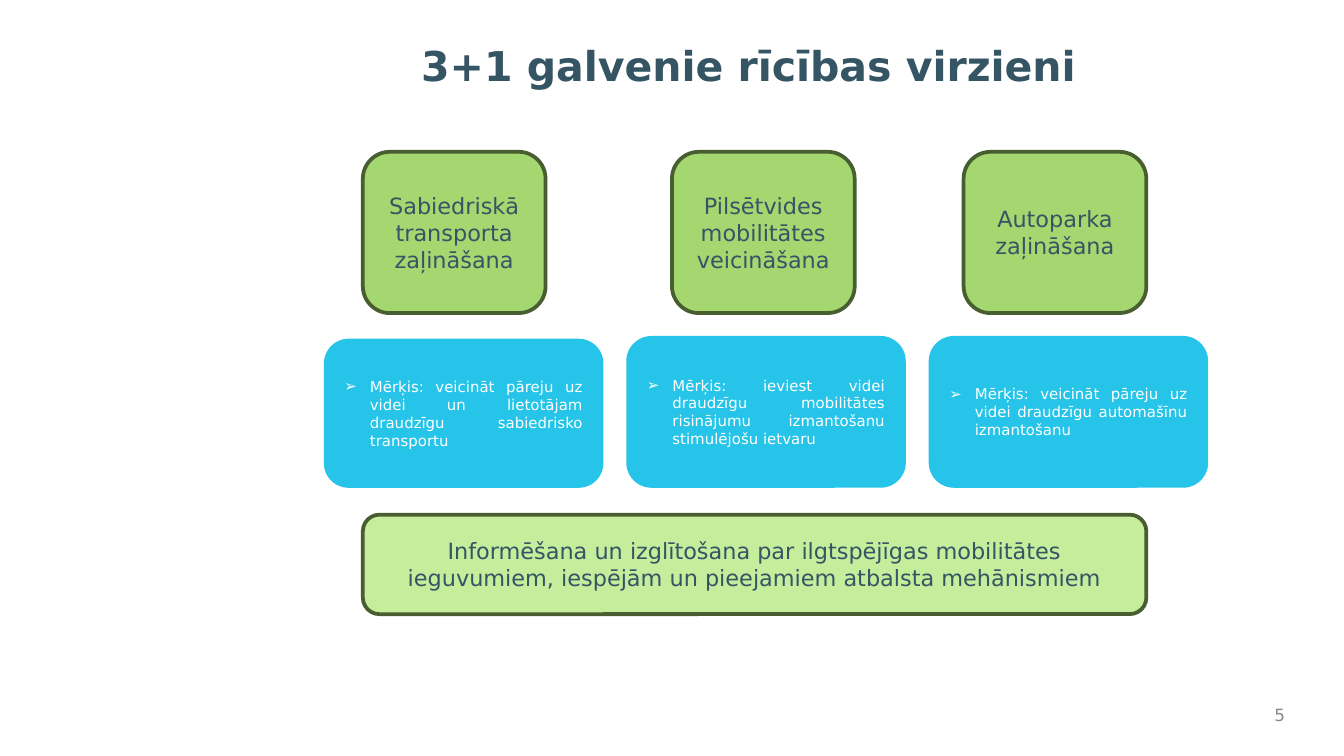
from lxml import etree
from pptx import Presentation
from pptx.dml.color import RGBColor
from pptx.enum.shapes import MSO_SHAPE
from pptx.enum.text import MSO_ANCHOR, MSO_AUTO_SIZE, PP_ALIGN
from pptx.oxml.ns import qn
from pptx.util import Inches, Pt

ROUNDED = MSO_SHAPE.ROUNDED_RECTANGLE
TOP, MIDDLE = MSO_ANCHOR.TOP, MSO_ANCHOR.MIDDLE
NO_FIT = MSO_AUTO_SIZE.NONE
CENTER, RIGHT, JUSTIFY = PP_ALIGN.CENTER, PP_ALIGN.RIGHT, PP_ALIGN.JUSTIFY

PAGE_WIDTH = 10
PAGE_HEIGHT = PAGE_WIDTH * 9 / 16

FONT = "DejaVu Sans"
SLATE, GREY, WHITE = "355464", "898989", "FFFFFF"
GREEN, PALE_GREEN, DARK_GREEN, BLUE = "A5D770", "C6ED9C", "485E31", "26C4E8"

TITLE_FORMAT = {"size": Pt(22), "bold": True}
LABEL_FORMAT = {"size": Pt(12), "bold": False}
GOAL_FORMAT = {"size": Pt(8), "bold": False}
NUMBER_FORMAT = {"size": Pt(9), "bold": False}

# Direction name and its box, then goal and its box
DIRECTIONS = [
    ("Sabiedriskā transporta zaļināšana", (2.7, 1.13, 1.36, 1.2),
     "Mērķis: veicināt pāreju uz videi un lietotājam draudzīgu sabiedrisko transportu",
     (2.41, 2.52, 2.08, 1.11)),
    ("Pilsētvides mobilitātes veicināšana", (5, 1.13, 1.36, 1.2),
     "Mērķis: ieviest videi draudzīgu mobilitātes risinājumu izmantošanu stimulējošu ietvaru",
     (4.66, 2.5, 2.08, 1.13)),
    ("Autoparka zaļināšana", (7.17, 1.13, 1.36, 1.2),
     "Mērķis: veicināt pāreju uz videi draudzīgu automašīnu izmantošanu",
     (6.91, 2.5, 2.08, 1.13)),
]


def colour(value):
    return RGBColor.from_string(value)


def write(shape, text, text_format, text_colour, alignment=CENTER, anchor=MIDDLE):
    """Fill the shape with one formatted paragraph and return that paragraph."""
    frame = shape.text_frame
    frame.word_wrap = True
    frame.auto_size = NO_FIT
    frame.vertical_anchor = anchor
    para = frame.paragraphs[0]
    para.alignment = alignment
    span = para.add_run()
    span.text = text
    span.font.name = FONT
    span.font.color.rgb = colour(text_colour)
    for name, value in text_format.items():
        setattr(span.font, name, value)
    return para


def add_bullet(para, indent=0.19):
    properties = para._p.get_or_add_pPr()
    properties.set("marL", str(Inches(indent)))
    properties.set("indent", str(-Inches(indent)))
    etree.SubElement(properties, qn("a:buFont"), typeface=FONT)
    etree.SubElement(properties, qn("a:buChar"), char="➢")


def add_panel(page, box, fill, outline=None):
    panel = page.shapes.add_shape(ROUNDED, *map(Inches, box))
    panel.shadow.inherit = False
    panel.fill.solid()
    panel.fill.fore_color.rgb = colour(fill)
    if outline:
        panel.line.color.rgb = colour(outline)
        panel.line.width = Pt(2)
    else:
        panel.line.fill.background()
    return panel


def add_title(page, box, text):
    title = page.shapes.title
    title.left, title.top, title.width, title.height = map(Inches, box)
    write(title, text, TITLE_FORMAT, SLATE, anchor=TOP)


def add_label(page, box, text, fill):
    write(add_panel(page, box, fill, DARK_GREEN), text, LABEL_FORMAT, SLATE)


def add_goal(page, box, text):
    para = write(add_panel(page, box, BLUE), text, GOAL_FORMAT, WHITE, JUSTIFY)
    add_bullet(para)
    para.space_after = Pt(6)


def add_page_number(page, box, text):
    number = page.shapes.add_textbox(*map(Inches, box))
    write(number, text, NUMBER_FORMAT, GREY, RIGHT)


def main():
    deck = Presentation()
    deck.slide_width, deck.slide_height = Inches(PAGE_WIDTH), Inches(PAGE_HEIGHT)
    page = deck.slides.add_slide(deck.slide_layouts[5])
    add_title(page, (2.83, 0.25, 5.48, 0.87), "3+1 galvenie rīcības virzieni")
    add_page_number(page, (9.33, 5.19, 0.33, 0.25), "5")
    for name, name_box, _, _ in DIRECTIONS:
        add_label(page, name_box, name, GREEN)
    for _, _, goal, goal_box in DIRECTIONS:
        add_goal(page, goal_box, goal)
    add_label(page, (2.7, 3.83, 5.83, 0.74),
              "Informēšana un izglītošana par ilgtspējīgas mobilitātes ieguvumiem, "
              "iespējām un pieejamiem atbalsta mehānismiem", PALE_GREEN)
    deck.save("out.pptx")


if __name__ == "__main__":
    main()
